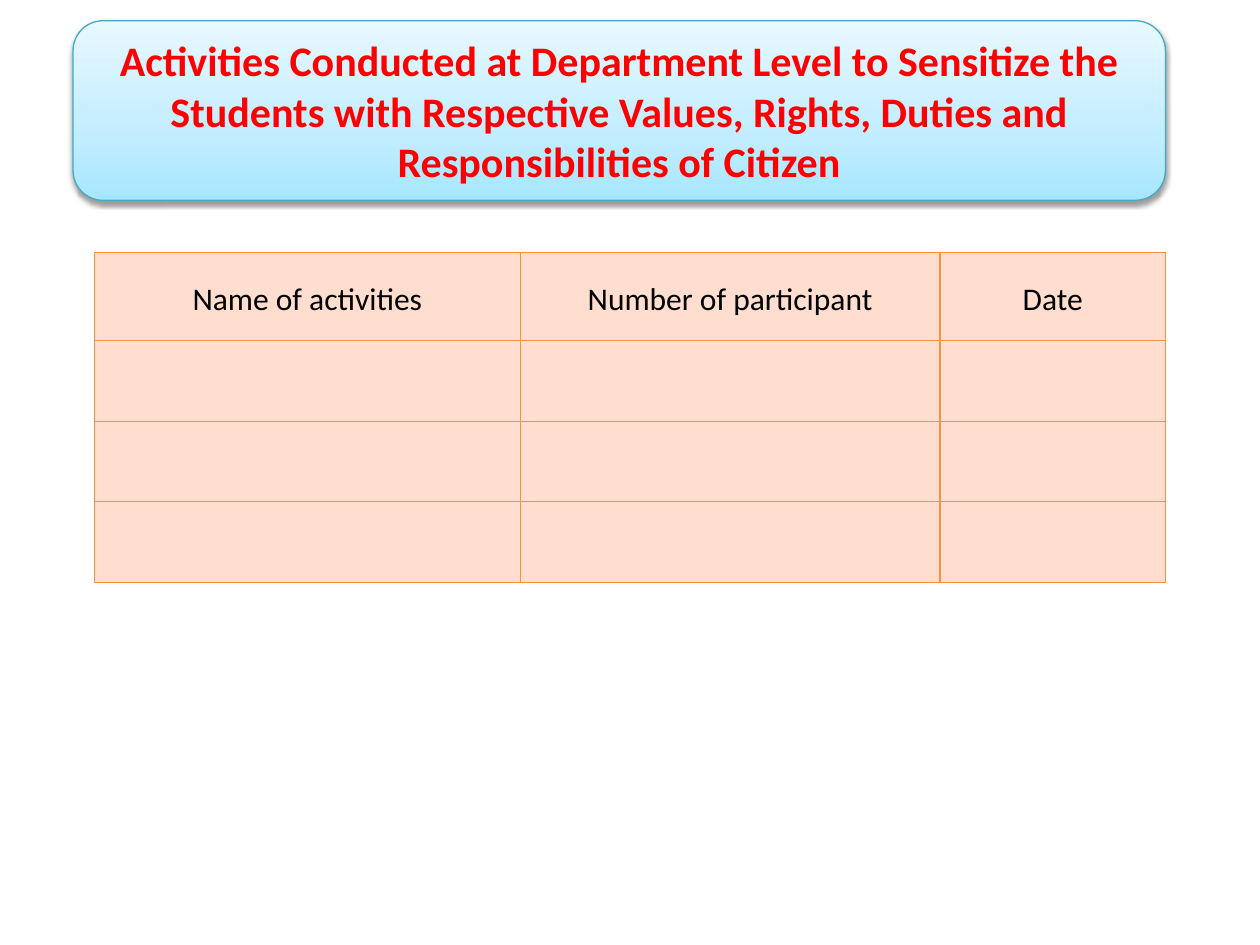
from copy import deepcopy

from lxml import etree
from pptx import Presentation
from pptx.dml.color import RGBColor
from pptx.enum.shapes import MSO_SHAPE
from pptx.enum.text import MSO_ANCHOR, PP_ALIGN
from pptx.oxml import parse_xml
from pptx.oxml.ns import nsdecls, qn
from pptx.util import Inches, Pt

ROUNDED = MSO_SHAPE.ROUNDED_RECTANGLE
MIDDLE = MSO_ANCHOR.MIDDLE
CENTER = PP_ALIGN.CENTER

TITLE = (
    "Activities Conducted at Department Level to Sensitize the Students with "
    "Respective Values, Rights, Duties and Responsibilities of Citizen"
)
HEADINGS = ["Name of activities", "Number of participant", "Date"]
COLUMN_WIDTHS = [3.38, 3.33, 1.79]
ROW_HEIGHTS = [0.7] + [0.64] * 3
BANNER_STOPS = [(0, "A7E6FF"), (0.35, "C1EDFF"), (1, "E7F8FF")]


def color(value):
    """Return the colour for a hex string."""
    return RGBColor.from_string(value)


class ActivitySlide:
    """Holds the style and the current slide; lengths are shares of its size."""

    font = "Calibri"
    title_color = "FF0000"
    text_color = "000000"
    banner_line = "46AAC5"
    cell_fill = "FFDDCF"
    cell_border = "F69240"

    def __init__(self, presentation):
        self.width = presentation.slide_width
        self.height = presentation.slide_height
        self.slide = presentation.slides.add_slide(presentation.slide_layouts[6])

    def place(self, left, top, width, height):
        """Turn shares of the slide into lengths."""
        return (
            int(left * self.width),
            int(top * self.height),
            int(width * self.width),
            int(height * self.height),
        )

    def label(self, frame, text, size, hue, bold=False, spacing=None):
        """Put one centred paragraph into a text frame."""
        frame.text = text
        paragraph = frame.paragraphs[0]
        paragraph.alignment = CENTER
        paragraph.line_spacing = spacing
        for run in paragraph.runs:
            run.font.name = self.font
            run.font.size = Pt(size)
            run.font.bold = bold
            run.font.color.rgb = color(hue)

    def banner(self, text, stops, box):
        """Draw the rounded title banner with its gradient and shadow."""
        banner = self.slide.shapes.add_shape(ROUNDED, *self.place(*box))
        banner.fill.gradient()
        banner.fill.gradient_angle = 90
        stop_list = banner._element.spPr.find(".//" + qn("a:gsLst"))
        stop_list.append(deepcopy(stop_list[-1]))
        for stop, (position, hue) in zip(banner.fill.gradient_stops, stops):
            stop.position = position
            stop.color.rgb = color(hue)
        banner.line.color.rgb = color(self.banner_line)
        banner.line.width = Pt(0.75)
        self.shadow(banner)
        banner.text_frame.word_wrap = True
        banner.text_frame.vertical_anchor = MIDDLE
        self.label(banner.text_frame, text, 24, self.title_color, bold=True)

    def shadow(self, shape):
        """Give a shape a soft shadow below it."""
        shape.shadow.inherit = False
        effects = shape._element.spPr.find(qn("a:effectLst"))
        outer = etree.SubElement(
            effects, qn("a:outerShdw"), blurRad=str(Pt(3.1)), dist=str(Pt(1.6)),
            dir="5400000", rotWithShape="0",
        )
        black = etree.SubElement(outer, qn("a:srgbClr"), val="000000")
        etree.SubElement(black, qn("a:alpha"), val="38000")

    def table(self, headings, widths, heights, box):
        """Draw a table with a heading row and empty rows below it."""
        frame = self.slide.shapes.add_table(
            len(heights), len(widths), *self.place(*box)
        )
        grid = frame.table
        for column, width in zip(grid.columns, widths):
            column.width = Inches(width)
        for row, height in zip(grid.rows, heights):
            row.height = Inches(height)
        texts = headings + [""] * (len(widths) * (len(heights) - 1))
        for cell, text in zip(grid.iter_cells(), texts):
            self.cell(cell, text)

    def cell(self, cell, text):
        """Style and fill in one table cell."""
        cell.margin_left = cell.margin_right = Inches(0.07)
        cell.margin_top = cell.margin_bottom = 0
        cell.vertical_anchor = MIDDLE
        properties = cell._tc.get_or_add_tcPr()
        for side in "LRTB":
            properties.append(parse_xml(
                f'<a:ln{side} {nsdecls("a")} w="{Pt(0.75)}"><a:solidFill>'
                f'<a:srgbClr val="{self.cell_border}"/></a:solidFill></a:ln{side}>'
            ))
        cell.fill.solid()
        cell.fill.fore_color.rgb = color(self.cell_fill)
        self.label(cell.text_frame, text, 18, self.text_color, spacing=1.15)


def main():
    """Build and save the slide."""
    presentation = Presentation()
    presentation.slide_width = Inches(10)
    presentation.slide_height = Inches(7.5)
    page = ActivitySlide(presentation)
    page.banner(TITLE, BANNER_STOPS, (0.058, 0.022, 0.867, 0.19))
    page.table(HEADINGS, COLUMN_WIDTHS, ROW_HEIGHTS, (0.075, 0.267, 0.85, 0.349))
    presentation.save("out.pptx")


if __name__ == "__main__":
    main()
